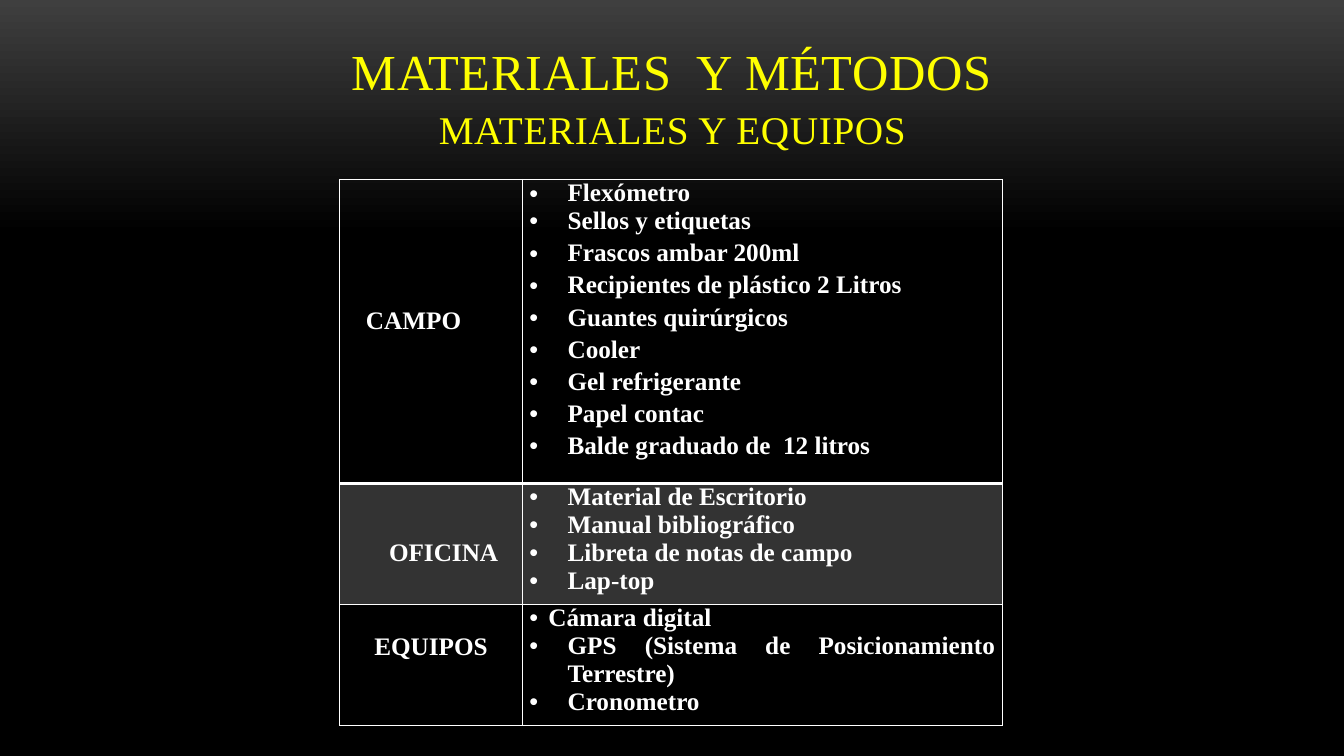
from copy import deepcopy
from dataclasses import dataclass

from lxml.etree import SubElement
from pptx import Presentation
from pptx.dml.color import RGBColor
from pptx.enum.text import MSO_ANCHOR, PP_ALIGN
from pptx.oxml.ns import qn
from pptx.util import Inches, Pt

TITLE_LINES = [("MATERIALES  Y MÉTODOS", 36), ("MATERIALES Y EQUIPOS", 28)]

# Label: text, alignment, indent in inches, top margin in inches.
# Item: text, hanging indent in inches, line spacing.
ROWS = [
    {
        "label": ("CAMPO", PP_ALIGN.LEFT, 0.19, 1.27),
        "height": 2.78,
        "shaded": False,
        "items": [
            ("Flexómetro", 0.38, 1),
            ("Sellos y etiquetas", 0.38, 1),
            ("Frascos ambar 200ml", 0.38, 1.15),
            ("Recipientes de plástico 2 Litros", 0.38, 1.15),
            ("Guantes quirúrgicos", 0.38, 1.15),
            ("Cooler", 0.38, 1.15),
            ("Gel refrigerante", 0.38, 1.15),
            ("Papel contac", 0.38, 1.15),
            ("Balde graduado de  12 litros", 0.38, 1.15),
        ],
    },
    {
        "label": ("OFICINA", PP_ALIGN.CENTER, 0.25, 0.55),
        "height": 1.11,
        "shaded": True,
        "items": [
            ("Material de Escritorio", 0.38, 1),
            ("Manual bibliográfico", 0.38, 1),
            ("Libreta de notas de campo", 0.38, 1),
            ("Lap-top", 0.38, 1),
        ],
    },
    {
        "label": ("EQUIPOS", PP_ALIGN.CENTER, 0, 0.28),
        "height": 1.11,
        "shaded": False,
        "items": [
            ("Cámara digital", 0.19, 1),
            ("GPS (Sistema de Posicionamiento Terrestre)", 0.38, 1),
            ("Cronometro", 0.38, 1),
        ],
    },
]
COLUMN_WIDTHS = [1.81, 4.76]


@dataclass(frozen=True)
class Theme:
    font: str = "Times New Roman"
    title: str = "FFFF00"
    text: str = "FFFFFF"
    line: str = "FFFFFF"
    glow: str = "3F3F3F"
    night: str = "000000"
    shade_percent: int = 20
    body_size: int = 18


THEME = Theme()


def add_run(paragraph, text, size, color, bold=False):
    run = paragraph.add_run()
    run.text = text
    run.font.name = THEME.font
    run.font.size = Pt(size)
    run.font.bold = bold
    run.font.color.rgb = RGBColor.from_string(color)
    return run


def paint_background(slide):
    fill = slide.background.fill
    fill.gradient()
    fill.gradient_angle = 270
    stops = fill.gradient_stops
    for stop, color, position in zip(stops, (THEME.glow, THEME.night), (0, 0.31)):
        stop.color.rgb = RGBColor.from_string(color)
        stop.position = position
    stop_list = slide.background._cSld.find(".//" + qn("a:gsLst"))
    last_stop = deepcopy(stop_list[-1])
    last_stop.set("pos", "100000")
    stop_list.append(last_stop)


def add_title(slide):
    box = slide.shapes.add_textbox(Inches(0.89), Inches(0.3), Inches(11.56), Inches(1.25))
    frame = box.text_frame
    frame.word_wrap = True
    frame.vertical_anchor = MSO_ANCHOR.BOTTOM
    frame.margin_bottom = Inches(0.04)
    paragraph = frame.paragraphs[0]
    paragraph.alignment = PP_ALIGN.CENTER
    paragraph.line_spacing = 1.1
    for index, (text, size) in enumerate(TITLE_LINES):
        if index:
            paragraph.add_line_break()
        run = add_run(paragraph, text, size, THEME.title)
        run.font._element.set("spc", "50")


def set_indent(paragraph, left, first=0):
    properties = paragraph._p.get_or_add_pPr()
    properties.set("marL", str(Inches(left)))
    properties.set("indent", str(Inches(first)))
    return properties


def add_solid_fill(parent, color):
    fill = SubElement(parent, qn("a:solidFill"))
    return SubElement(fill, qn("a:srgbClr"), val=color)


def style_cell(cell, shaded, bottom_width):
    """Set side margins, borders and a clear or translucent fill."""
    cell.margin_left = cell.margin_right = Inches(0.07)
    cell.margin_top = cell.margin_bottom = 0
    properties = cell._tc.get_or_add_tcPr()
    for side, width in (("L", 1), ("R", 1), ("T", 1), ("B", bottom_width)):
        line = SubElement(properties, qn("a:ln" + side), w=str(Pt(width)))
        add_solid_fill(line, THEME.line)
    if shaded:
        color = add_solid_fill(properties, THEME.text)
        SubElement(color, qn("a:alpha"), val=str(THEME.shade_percent * 1000))
    else:
        SubElement(properties, qn("a:noFill"))


def fill_label(cell, text, alignment, indent, top):
    cell.margin_top = Inches(top)
    paragraph = cell.text_frame.paragraphs[0]
    paragraph.alignment = alignment
    set_indent(paragraph, indent)
    add_run(paragraph, text, THEME.body_size, THEME.text, bold=True)


def fill_items(cell, items):
    frame = cell.text_frame
    for index, (text, indent, spacing) in enumerate(items):
        paragraph = frame.add_paragraph() if index else frame.paragraphs[0]
        paragraph.alignment = PP_ALIGN.JUSTIFY
        paragraph.line_spacing = spacing
        properties = set_indent(paragraph, indent, -indent)
        SubElement(properties, qn("a:buFont"), typeface="Arial")
        SubElement(properties, qn("a:buChar"), char="•")
        add_run(paragraph, text, THEME.body_size, THEME.text, bold=True)


def add_materials_table(slide):
    height = sum(row["height"] for row in ROWS)
    frame = slide.shapes.add_table(
        len(ROWS), len(COLUMN_WIDTHS), Inches(3.37), Inches(1.78),
        Inches(sum(COLUMN_WIDTHS)), Inches(height),
    )
    table = frame.table
    table.first_row = table.horz_banding = False
    for column, width in zip(table.columns, COLUMN_WIDTHS):
        column.width = Inches(width)
    for index, row in enumerate(ROWS):
        table.rows[index].height = Inches(row["height"])
        label_cell, items_cell = table.rows[index].cells
        for cell in (label_cell, items_cell):
            style_cell(cell, row["shaded"], 1 if index else 2)
        fill_label(label_cell, *row["label"])
        fill_items(items_cell, row["items"])


def main():
    presentation = Presentation()
    presentation.slide_width = Inches(13.33)
    presentation.slide_height = Inches(7.5)
    slide = presentation.slides.add_slide(presentation.slide_layouts[6])
    paint_background(slide)
    add_title(slide)
    add_materials_table(slide)
    presentation.save("out.pptx")


if __name__ == "__main__":
    main()
